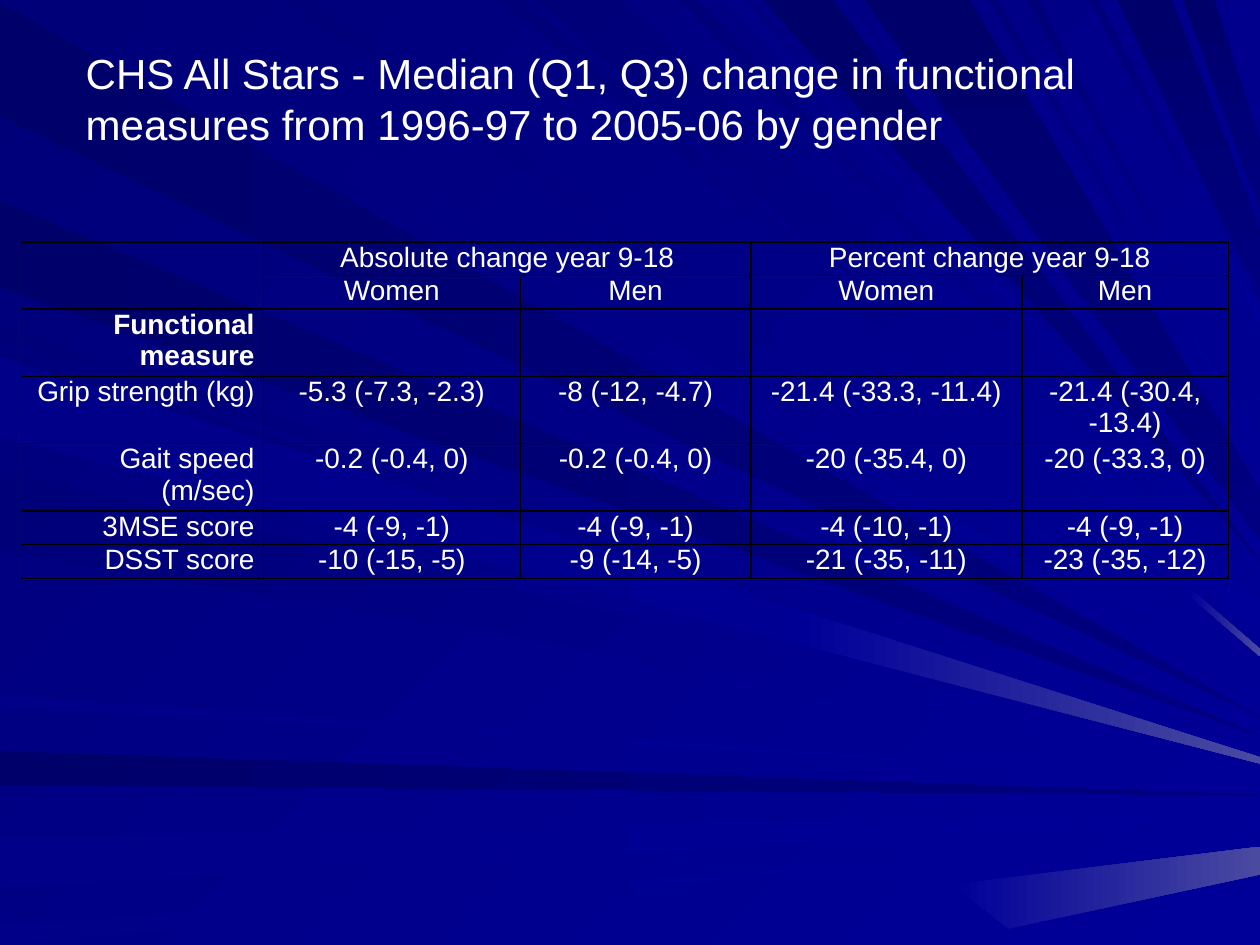
from functools import partial

from lxml.etree import SubElement
from pptx import Presentation
from pptx.dml.color import RGBColor
from pptx.enum.text import MSO_ANCHOR as Anchor, MSO_AUTO_SIZE as AutoSize, PP_ALIGN as Align
from pptx.oxml.ns import qn
from pptx.util import Inches, Pt

blue = partial(RGBColor, 0, 0)
INK = blue(0x6B)
DUSK = blue(0x78)
NAVY = blue(0x80)
AZURE = blue(0x88)
ROYAL = blue(0x99)
HAZE = RGBColor(0x4A, 0x4A, 0xA1)
WHITE = RGBColor(0xFF, 0xFF, 0xFF)
BLACK = RGBColor(0, 0, 0)

GRID_COLUMNS, GRID_ROWS = 1000, 750

SHADOW = (INK, NAVY, 0)
STEEP_SHADOW = (INK, NAVY, 90)
BEAM = (DUSK, ROYAL, 45)
LIGHT = (AZURE, ROYAL, 0)
GLINT = (ROYAL, HAZE, 0)

LEFT, TOP = "left", "top"
RAYS = [
    (LEFT, SHADOW, 2, 93, 569),
    (TOP, BEAM, 26, 101, 562),
    (LEFT, SHADOW, 596, 623, 631),
    (LEFT, LIGHT, 665, 704, 643, 8),
    (LEFT, LIGHT, 735, 750, 662),
    (LEFT, BEAM, 258, 270, 589),
    (LEFT, SHADOW, 159, 228, 584),
    (TOP, BEAM, 398, 416, 515, 6),
    (TOP, BEAM, 426, 492, 479, 28),
    (TOP, BEAM, 540, 552, 463),
    (TOP, STEEP_SHADOW, 606, 661, 445),
    (TOP, STEEP_SHADOW, 887, 930, 183, 54),
    (TOP, STEEP_SHADOW, 939, 964, 114, 53),
    (LEFT, BEAM, 278, 342, 596, 6),
    (LEFT, BEAM, 374, 437, 605),
    (LEFT, LIGHT, 552, 560, 621),
    (TOP, BEAM, 225, 247, 547, 5),
    (TOP, LIGHT, 577, 588, 453),
    (TOP, STEEP_SHADOW, 686, 770, 390, 38),
    (TOP, BEAM, 785, 792, 354, 6),
    (TOP, BEAM, 815, 824, 335),
    (TOP, BEAM, 865, 872, 249, 9),
    (LEFT, LIGHT, 283, 347, 601, 5),
]
GLINTS = [
    [(756, 702), (800, 737), (1000, 694), (1000, 672)],
    [(944, 473), (947, 469), (1000, 515), (1000, 521)],
    [(637, 485), (633, 511), (1000, 606), (1000, 601)],
]

TITLE = ("CHS All Stars - Median (Q1, Q3) change in functional measures "
         "from 1996-97 to 2005-06 by gender")
CHANGES = [
    ("", "Absolute change year 9-18", "", "Percent change year 9-18", ""),
    ("", "Women", "Men", "Women", "Men"),
    ("Functional measure", "", "", "", ""),
    ("Grip strength (kg)", "-5.3 (-7.3, -2.3)", "-8 (-12, -4.7)",
     "-21.4 (-33.3, -11.4)", "-21.4 (-30.4, -13.4)"),
    ("Gait speed (m/sec)", "-0.2 (-0.4, 0)", "-0.2 (-0.4, 0)", "-20 (-35.4, 0)", "-20 (-33.3, 0)"),
    ("3MSE score", "-4 (-9, -1)", "-4 (-9, -1)", "-4 (-10, -1)", "-4 (-9, -1)"),
    ("DSST score", "-10 (-15, -5)", "-9 (-14, -5)", "-21 (-35, -11)", "-23 (-35, -12)"),
]
MEASURE_WIDTHS = [192, 204, 183, 215, 164]
LINES_PER_ROW = [1, 1, 2, 2, 2, 1, 1]
LINE_HEIGHT = 26.7
MERGES = [((0, 0), (1, 0)), ((0, 1), (0, 2)), ((0, 3), (0, 4))]


def ray_corners(side, near, far, tip, spread=0):
    upper, lower = (GRID_COLUMNS, tip), (GRID_COLUMNS, tip + spread)
    if side == TOP:
        return [(near, 0), (far, 0), upper, lower]
    return [(0, far), (0, near), upper, lower]


class Deck:
    font_name = "Arial"
    title_size = Pt(24)
    table_size = Pt(16)
    side_margin = Inches(0.07)

    def __init__(self):
        self.prs = Presentation()
        self.prs.slide_width, self.prs.slide_height = Inches(10), Inches(7.5)
        self.unit = self.prs.slide_width // GRID_COLUMNS
        self.slide = self.prs.slides.add_slide(self.prs.slide_layouts[5])

    def span(self, *cells):
        return [round(cell * self.unit) for cell in cells]

    def style(self, paragraph, size, align, bold=False):
        paragraph.alignment = align
        font = paragraph.font
        font.name, font.size, font.bold = self.font_name, size, bold
        font.color.rgb = WHITE

    def paint(self, fill, start, end, angle):
        fill.gradient()
        fill.gradient_angle = (360 - angle) % 360
        for stop, color in zip(fill.gradient_stops, (start, end)):
            stop.color.rgb = color

    def background(self, shading):
        self.paint(self.slide.background.fill, *shading)

    def ray_fan(self):
        fan = self.slide.shapes.add_group_shape()
        self.slide.shapes.title.element.addprevious(fan.element)
        return fan

    def ray(self, fan, shading, corners):
        outline = fan.shapes.build_freeform(*corners[0], scale=self.unit)
        outline.add_line_segments(corners[1:], close=True)
        ray = outline.convert_to_shape()
        ray.shadow.inherit = False
        ray.line.fill.background()
        self.paint(ray.fill, *shading)

    def title(self, text, left, top, width, height):
        heading = self.slide.shapes.title
        heading.left, heading.top, heading.width, heading.height = self.span(left, top, width, height)
        frame = heading.text_frame
        frame.text = text
        frame.word_wrap = True
        frame.auto_size = AutoSize.SHAPE_TO_FIT_TEXT
        frame.vertical_anchor = Anchor.TOP
        self.style(frame.paragraphs[0], self.title_size, Align.LEFT)

    def border(self, cell):
        properties = cell._tc.get_or_add_tcPr()
        for side in ("a:lnL", "a:lnR", "a:lnT", "a:lnB"):
            edge = SubElement(properties, qn(side), w=str(Pt(1)))
            paint = SubElement(edge, qn("a:solidFill"))
            SubElement(paint, qn("a:srgbClr"), val=str(BLACK))

    def table(self, rows, left, top, widths, heights, merges):
        place = self.span(left, top, sum(widths), sum(heights))
        grid = self.slide.shapes.add_table(len(rows), len(widths), *place).table
        grid.first_row = grid.horz_banding = False
        for column, width in zip(grid.columns, self.span(*widths)):
            column.width = width
        for row, height in zip(grid.rows, self.span(*heights)):
            row.height = height
        for r, texts in enumerate(rows):
            for c, text in enumerate(texts):
                cell = grid.cell(r, c)
                cell.text = text
                cell.margin_left = cell.margin_right = self.side_margin
                cell.margin_top = cell.margin_bottom = 0
                self.border(cell)
                cell.fill.background()
                self.style(cell.text_frame.paragraphs[0], self.table_size,
                           Align.CENTER if c else Align.RIGHT, bold=(r, c) == (2, 0))
        for first, last in merges:
            grid.cell(*first).merge(grid.cell(*last))


def main():
    deck = Deck()
    deck.background(BEAM)
    fan = deck.ray_fan()
    for side, shading, *reach in RAYS:
        deck.ray(fan, shading, ray_corners(side, *reach))
    for corners in GLINTS:
        deck.ray(fan, GLINT, corners)
    deck.title(TITLE, 58, 33, 917, 91)
    deck.table(CHANGES, 17, 192, MEASURE_WIDTHS,
               [lines * LINE_HEIGHT for lines in LINES_PER_ROW], MERGES)
    deck.prs.save("out.pptx")


if __name__ == "__main__":
    main()
